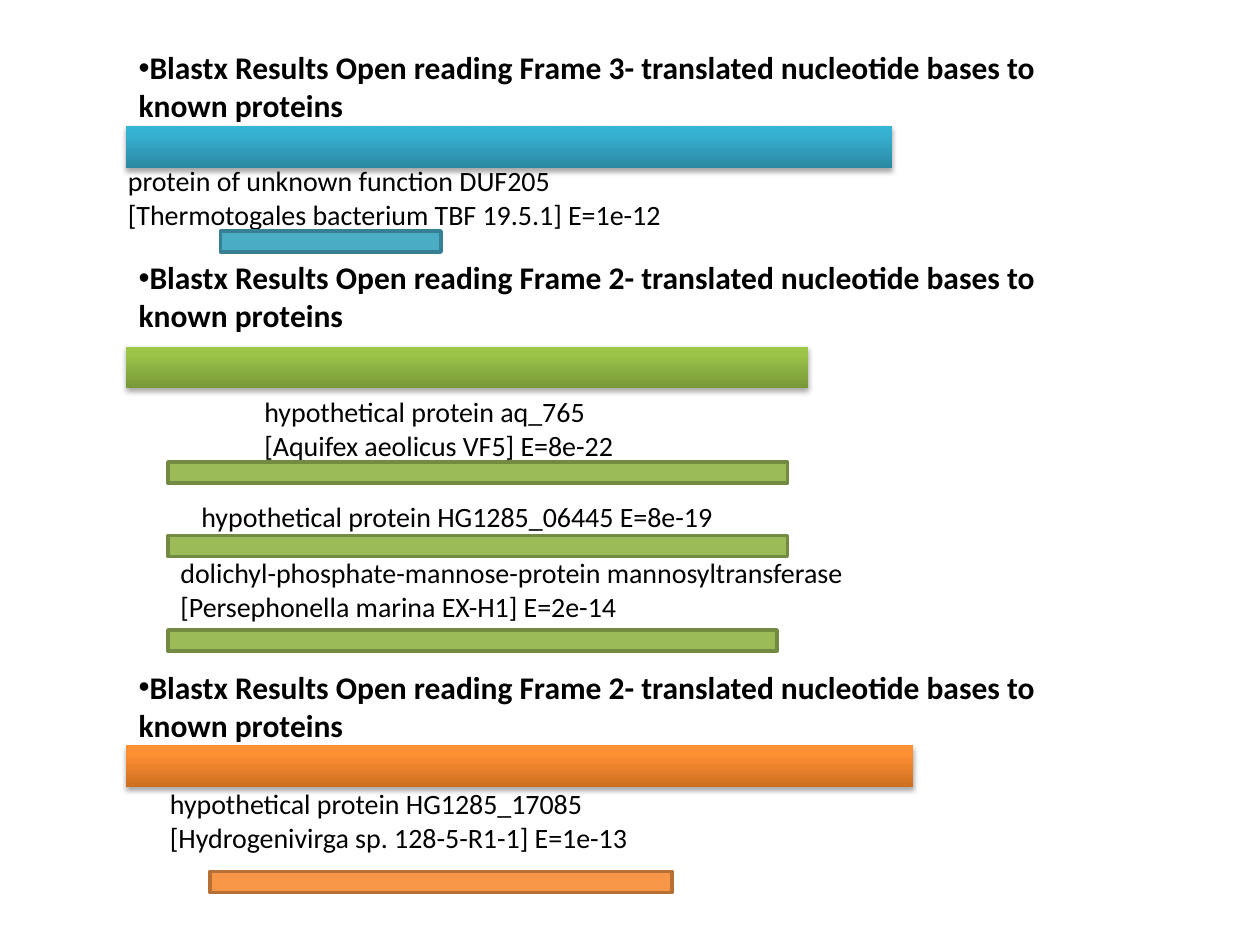
"""Build the slide of Blastx matches for three open reading frames."""
from copy import deepcopy
from typing import NamedTuple

from lxml.etree import SubElement
from pptx import Presentation
from pptx.dml.color import RGBColor
from pptx.enum.shapes import MSO_SHAPE
from pptx.enum.text import MSO_ANCHOR, MSO_AUTO_SIZE, PP_ALIGN
from pptx.oxml.ns import qn
from pptx.util import Pt


class Box(NamedTuple):
    left: float
    top: float
    width: float
    height: float


class Palette(NamedTuple):
    gradient: tuple[str, str, str]
    fill: str
    outline: str


class Match(NamedTuple):
    label: str
    label_box: Box
    bar_box: Box


class Frame(NamedTuple):
    number: int
    heading_box: Box
    query_box: Box
    palette: Palette
    matches: tuple[Match, ...]


BLUE = Palette(("2A88A2", "37B1D2", "34B4D6"), "4BACC6", "377F92")
GREEN = Palette(("779737", "9BC348", "9DC746"), "9BBB59", "738A42")
ORANGE = Palette(("CC6E20", "FF9034", "FF9136"), "F79646", "B76F34")
STOP_POSITIONS = (0, 0.8, 1)

FRAMES = (
    Frame(3, Box(72, 24, 570, 51), Box(72, 72, 438, 24), BLUE, (
        Match("protein of unknown function DUF205\n"
              "[Thermotogales bacterium TBF 19.5.1] E=1e-12",
              Box(66, 90, 372, 46), Box(126, 132, 126, 12)),
    )),
    Frame(2, Box(72, 144, 570, 51), Box(72, 198, 390, 24), GREEN, (
        Match("hypothetical protein aq_765 [Aquifex aeolicus VF5] E=8e-22",
              Box(144, 222, 246, 46), Box(96, 264, 354, 12)),
        Match("hypothetical protein HG1285_06445 E=8e-19",
              Box(108, 282, 366, 27), Box(96, 306, 354, 12)),
        Match("dolichyl-phosphate-mannose-protein mannosyltransferase\n"
              "[Persephonella marina EX-H1] E=2e-14",
              Box(96, 314, 426, 46), Box(96, 360, 348, 12)),
    )),
    Frame(2, Box(72, 378, 576, 51), Box(72, 426, 450, 24), ORANGE, (
        Match("hypothetical protein HG1285_17085\n"
              "[Hydrogenivirga sp. 128-5-R1-1] E=1e-13",
              Box(90, 446, 348, 46), Box(120, 498, 264, 12)),
    )),
)

TEXT_FRAME_FORMAT = {"word_wrap": True, "auto_size": MSO_AUTO_SIZE.SHAPE_TO_FIT_TEXT,
                     "vertical_anchor": MSO_ANCHOR.TOP}
PARAGRAPH_FORMAT = {"alignment": PP_ALIGN.LEFT, "space_before": Pt(0)}
LABEL_FONT = {"name": "Calibri", "size": Pt(16), "bold": False}
HEADING_FONT = {"name": "Calibri", "size": Pt(18), "bold": True}


def color(value: str) -> RGBColor:
    """Turn a hex string into a colour."""
    return RGBColor.from_string(value)


def apply_format(target, values: dict) -> None:
    """Set each attribute named in the format values."""
    for attribute, value in values.items():
        setattr(target, attribute, value)


def write_text(holder, text: str, font_format: dict) -> None:
    """Fill a shape with formatted black text."""
    apply_format(holder.text_frame, TEXT_FRAME_FORMAT)
    holder.text_frame.text = text
    for paragraph in holder.text_frame.paragraphs:
        apply_format(paragraph, PARAGRAPH_FORMAT)
        for run in paragraph.runs:
            apply_format(run.font, font_format)
            run.font.color.rgb = color("000000")


def draw_heading(placeholder, frame: Frame) -> None:
    """Move a placeholder into place as a bulleted frame heading."""
    apply_format(placeholder, {side: Pt(value) for side, value
                               in frame.heading_box._asdict().items()})
    write_text(placeholder, f"Blastx Results Open reading Frame {frame.number}- "
               "translated nucleotide bases to known proteins", HEADING_FONT)
    properties = placeholder.text_frame.paragraphs[0]._p.get_or_add_pPr()
    properties.set("marL", "0")
    properties.set("indent", "0")
    SubElement(properties, qn("a:buFont"), typeface="Arial")
    SubElement(properties, qn("a:buChar"), char="•")


def add_bar(slide, box: Box):
    """Add a plain rectangle without the theme shadow."""
    bar = slide.shapes.add_shape(MSO_SHAPE.RECTANGLE, *map(Pt, box))
    bar.shadow.inherit = False
    return bar


def draw_query(slide, box: Box, gradient: tuple[str, str, str]) -> None:
    """Draw the shaded bar of a whole reading frame."""
    query = add_bar(slide, box)
    query.line.fill.background()
    query.fill.gradient()
    query.fill.gradient_angle = 90
    properties = query._element.spPr
    stop_list = properties.find(qn("a:gradFill")).find(qn("a:gsLst"))
    stop_list.append(deepcopy(stop_list[0]))
    for stop, position, shade in zip(query.fill.gradient_stops, STOP_POSITIONS, gradient):
        stop.position = position
        stop.color.rgb = color(shade)
    shadow = SubElement(properties.find(qn("a:effectLst")), qn("a:outerShdw"),
                        blurRad=str(Pt(3.1)), dist=str(Pt(1.8)),
                        dir="5400000", rotWithShape="0")
    shadow_color = SubElement(shadow, qn("a:srgbClr"), val="000000")
    SubElement(shadow_color, qn("a:alpha"), val="35000")


def draw_match(slide, match: Match, palette: Palette) -> None:
    """Draw a protein label and its aligned bar."""
    label = slide.shapes.add_textbox(*map(Pt, match.label_box))
    write_text(label, match.label, LABEL_FONT)
    bar = add_bar(slide, match.bar_box)
    bar.fill.solid()
    bar.fill.fore_color.rgb = color(palette.fill)
    bar.line.color.rgb = color(palette.outline)
    bar.line.width = Pt(2)


def main() -> None:
    """Build and save the slide."""
    presentation = Presentation()
    apply_format(presentation, {"slide_width": Pt(720), "slide_height": Pt(540)})
    two_content = presentation.slide_layouts.get_by_name("Two Content")
    slide = presentation.slides.add_slide(two_content)
    for placeholder, frame in zip(list(slide.placeholders), FRAMES):
        draw_heading(placeholder, frame)
        draw_query(slide, frame.query_box, frame.palette.gradient)
        for match in frame.matches:
            draw_match(slide, match, frame.palette)
    presentation.save("out.pptx")


if __name__ == "__main__":
    main()
